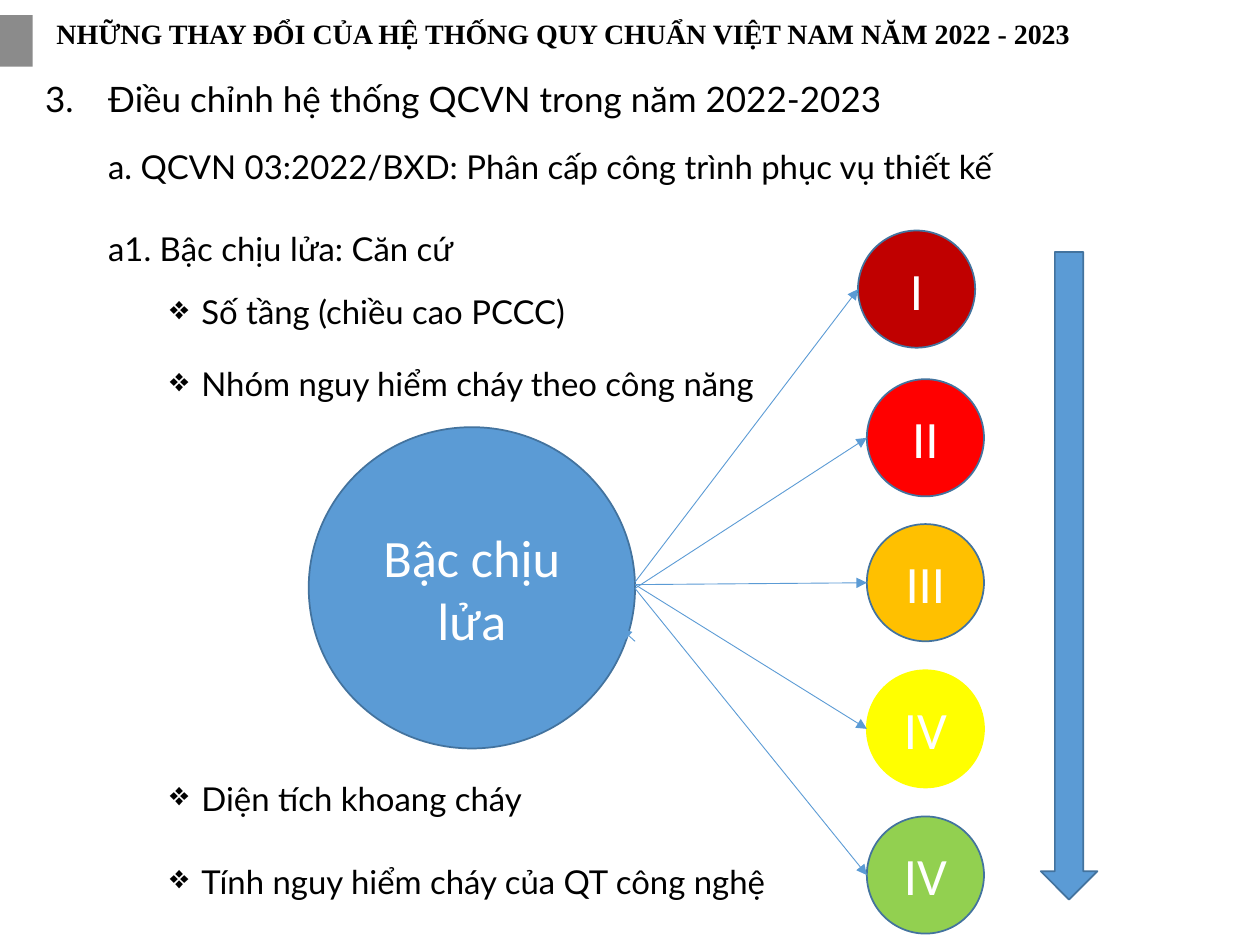
from lxml import etree
from pptx import Presentation
from pptx.dml.color import RGBColor
from pptx.enum.shapes import MSO_CONNECTOR, MSO_SHAPE
from pptx.enum.text import MSO_ANCHOR, PP_ALIGN
from pptx.oxml.ns import qn
from pptx.util import Inches, Pt

RECTANGLE = MSO_SHAPE.RECTANGLE
OVAL = MSO_SHAPE.OVAL
DOWN_ARROW = MSO_SHAPE.DOWN_ARROW
STRAIGHT = MSO_CONNECTOR.STRAIGHT
MIDDLE = MSO_ANCHOR.MIDDLE
CENTER = PP_ALIGN.CENTER

BLACK = RGBColor(0x00, 0x00, 0x00)
WHITE = RGBColor(0xFF, 0xFF, 0xFF)
GRAY = RGBColor(0x80, 0x80, 0x80)
BLUE = RGBColor(0x5B, 0x9B, 0xD5)
DARK_BLUE = RGBColor(0x43, 0x73, 0x9E)
DARK_RED = RGBColor(0xC0, 0x00, 0x00)
RED = RGBColor(0xFF, 0x00, 0x00)
ORANGE = RGBColor(0xFF, 0xC0, 0x00)
YELLOW = RGBColor(0xFF, 0xFF, 0x00)
GREEN = RGBColor(0x92, 0xD0, 0x50)

HUB_RIGHT = 5.04
GRADE_SIZE = 0.93
GRADES = [
    ("I", 6.81, 1.83, DARK_RED, DARK_BLUE, 4.62),
    ("II", 6.88, 3.01, RED, DARK_BLUE, 4.67),
    ("III", 6.88, 4.16, ORANGE, DARK_BLUE, 4.64),
    ("IV", 6.88, 5.32, YELLOW, YELLOW, 4.64),
    ("IV", 6.88, 6.48, GREEN, DARK_BLUE, 4.67),
]
CRITERIA = [
    ("Số tầng (chiều cao PCCC)", 2.11, 3.58),
    ("Nhóm nguy hiểm cháy theo công năng", 2.68, 5.34),
    ("Diện tích khoang cháy", 5.97, 5.34),
    ("Tính nguy hiểm cháy của QT công nghệ", 6.63, 5.34),
]


def write_text(frame, text, font="Lato", size=18.8, color=BLACK, bold=False,
               align=None, spacing=None, indent=0, bullet=None):
    frame.word_wrap = True
    para = frame.paragraphs[0]
    if bullet:
        tag, attributes = bullet
        properties = para._p.get_or_add_pPr()
        properties.set("marL", str(Inches(indent)))
        properties.set("indent", str(-Inches(indent)))
        etree.SubElement(properties, qn(tag), attributes)
    para.alignment = align
    para.line_spacing = spacing
    span = para.add_run()
    span.text = text
    span.font.name = font
    span.font.size = Pt(size)
    span.font.bold = bold
    span.font.color.rgb = color


def add_text(page, text, left, top, width, height, **style):
    box = page.shapes.add_textbox(
        Inches(left), Inches(top), Inches(width), Inches(height))
    write_text(box.text_frame, text, **style)


def add_figure(page, kind, left, top, width, height, fill, outline=None, text=None):
    figure = page.shapes.add_shape(
        kind, Inches(left), Inches(top), Inches(width), Inches(height))
    figure.shadow.inherit = False
    figure.fill.solid()
    figure.fill.fore_color.rgb = fill
    if outline is None:
        figure.line.fill.background()
    else:
        figure.line.color.rgb = outline
        figure.line.width = Pt(1)
    if text:
        figure.text_frame.vertical_anchor = MIDDLE
        write_text(figure.text_frame, text, font="Calibri", size=30,
                   color=WHITE, align=CENTER)
    return figure


def set_opacity(figure, percent):
    color = figure.fill._xPr.find(qn("a:solidFill"))[0]
    etree.SubElement(color, qn("a:alpha"), {"val": str(percent * 1000)})


def add_arrow(page, start, end):
    arrow = page.shapes.add_connector(
        STRAIGHT, *(Inches(value) for value in (*start, *end)))
    arrow.line.color.rgb = BLUE
    arrow.line.width = Pt(0.5)
    line = arrow.line._get_or_add_ln()
    etree.SubElement(line, qn("a:tailEnd"), {"type": "triangle"})
    etree.SubElement(arrow._element.spPr, qn("a:effectLst"))


def add_headings(page):
    marker = add_figure(page, RECTANGLE, 0, 0.12, 0.26, 0.41, GRAY)
    set_opacity(marker, 91)
    add_text(page, "Điều chỉnh hệ thống QCVN trong năm 2022-2023",
             0.26, 0.6, 8.69, 0.35, size=20, spacing=0.9, indent=0.5,
             bullet=("a:buAutoNum", {"type": "arabicPeriod", "startAt": "3"}))
    add_text(page, "NHỮNG THAY ĐỔI CỦA HỆ THỐNG QUY CHUẨN VIỆT NAM NĂM 2022 - 2023",
             0.35, 0.11, 8.94, 0.42, font="Times New Roman", size=16,
             bold=True, spacing=0.9)
    add_text(page, "a. QCVN 03:2022/BXD: Phân cấp công trình phục vụ thiết kế",
             0.76, 0.96, 7.4, 0.63, spacing=1.5)


def add_grades(page):
    add_figure(page, OVAL, 2.45, 3.39, 2.59, 2.55, BLUE, DARK_BLUE, "Bậc chịu lửa")
    for name, left, top, fill, outline, start in GRADES:
        add_figure(page, OVAL, left, top, GRADE_SIZE, GRADE_SIZE, fill, outline, name)
        add_arrow(page, (HUB_RIGHT, start), (left, top + GRADE_SIZE / 2))
    add_arrow(page, (HUB_RIGHT, 5.09), (4.93, 4.99))
    add_figure(page, DOWN_ARROW, 8.26, 2, 0.45, 5.14, BLUE, DARK_BLUE)


def add_criteria(page):
    add_text(page, "a1. Bậc chịu lửa: Căn cứ", 0.76, 1.61, 3.58, 0.63, spacing=1.5)
    for text, top, width in CRITERIA:
        add_text(page, text, 1.25, top, width, 0.63, spacing=1.5, indent=0.25,
                 bullet=("a:buChar", {"char": "❖"}))


def main():
    deck = Presentation()
    deck.slide_width = Inches(10)
    deck.slide_height = Inches(7.5)
    page = deck.slides.add_slide(deck.slide_layouts[6])
    add_headings(page)
    add_grades(page)
    add_criteria(page)
    deck.save("out.pptx")


if __name__ == "__main__":
    main()
